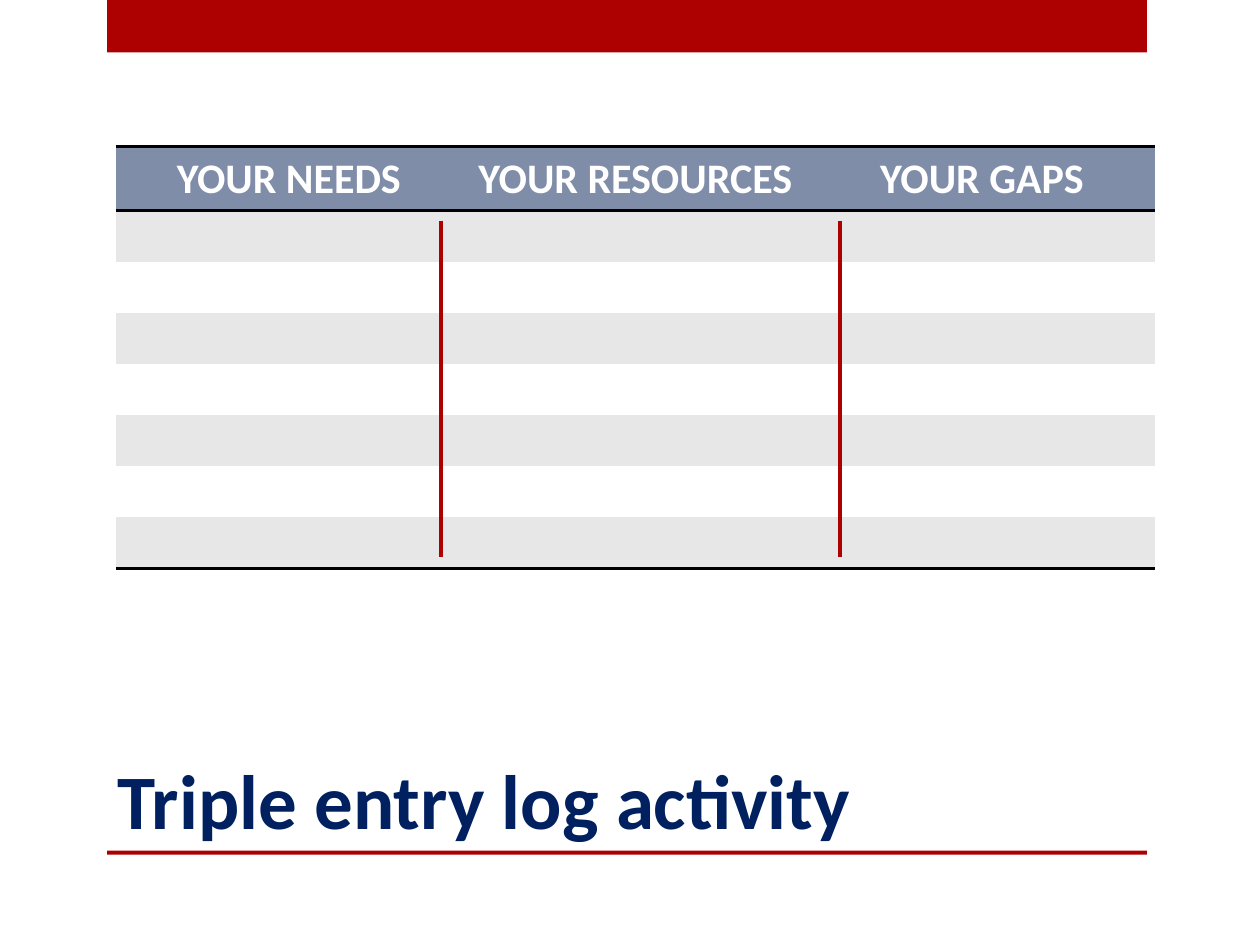
from lxml.etree import SubElement
from pptx import Presentation
from pptx.dml.color import RGBColor
from pptx.enum.shapes import MSO_CONNECTOR, MSO_SHAPE
from pptx.enum.text import MSO_ANCHOR, PP_ALIGN
from pptx.oxml.ns import qn
from pptx.util import Cm, Pt

COLORS = {
    "red": "AD0101", "navy": "002060", "head": "808DA9",
    "band": "E7E7E7", "white": "FFFFFF", "rule": "000000",
}
FONT = "Calibri"
PLAIN = "{2D5ABB26-0587-4C30-8999-92F81FD0307C}"  # no style, no grid
HEADS = ["YOUR NEEDS", "YOUR RESOURCES", "YOUR GAPS"]
ROWS = 8


def color(name):
    return RGBColor.from_string(COLORS[name])


def add_run(para, text, size, tone):
    run = para.add_run()
    run.text = text
    font = run.font
    font.name, font.size, font.bold = FONT, Pt(size), True
    font.color.rgb = color(tone)


def add_bar(slide, top, height):
    bar = slide.shapes.add_shape(
        MSO_SHAPE.RECTANGLE, Cm(2.16), Cm(top), Cm(20.96), Cm(height))
    bar.shadow.inherit = False
    bar.fill.solid()
    bar.fill.fore_color.rgb = color("red")
    bar.line.fill.background()


def set_title(slide, text):
    title = slide.shapes.title
    title.left, title.top = Cm(2.12), Cm(12.7)
    title.width, title.height = Cm(18.84), Cm(4.45)
    frame = title.text_frame
    frame.vertical_anchor = MSO_ANCHOR.BOTTOM
    para = frame.paragraphs[0]
    para.alignment = PP_ALIGN.LEFT
    add_run(para, text, 44, "navy")


def add_edge(cell, side):
    edge = SubElement(cell._tc.get_or_add_tcPr(), qn("a:ln" + side), w=str(Pt(2)))
    fill = SubElement(edge, qn("a:solidFill"))
    SubElement(fill, qn("a:srgbClr"), val=COLORS["rule"])


def style_cell(cell, row):
    # Edges come before the fill in the cell properties
    sides = "TB" if row == 0 else "B" if row == ROWS - 1 else ""
    for side in sides:
        add_edge(cell, side)
    tone = "head" if row == 0 else "band" if row % 2 else "white"
    cell.fill.solid()
    cell.fill.fore_color.rgb = color(tone)


def add_log(slide):
    frame = slide.shapes.add_table(
        ROWS, len(HEADS), Cm(2.33), Cm(2.96), Cm(20.96), Cm(8.5))
    table = frame.table
    table._tbl.tblPr.find(qn("a:tableStyleId")).text = PLAIN
    for i, row in enumerate(table.rows):
        row.height = Cm(1.03 if i else 1.29)
        for cell in row.cells:
            style_cell(cell, i)
    for cell, text in zip(table.rows[0].cells, HEADS):
        para = cell.text_frame.paragraphs[0]
        para.alignment = PP_ALIGN.CENTER
        add_run(para, text, 24, "white")


def add_divider(slide, x):
    line = slide.shapes.add_connector(
        MSO_CONNECTOR.STRAIGHT, Cm(x), Cm(4.45), Cm(x), Cm(11.22))
    line.line.color.rgb = color("red")
    line.line.width = Pt(2.5)
    SubElement(line._element.spPr, qn("a:effectLst"))


def main():
    deck = Presentation()
    deck.slide_width, deck.slide_height = Cm(25.4), Cm(19.05)
    slide = deck.slides.add_slide(deck.slide_layouts[5])
    # Top band and the rule under the title
    add_bar(slide, 0, 1.06)
    add_bar(slide, 17.15, 0.08)
    set_title(slide, "Triple entry log activity")
    # Log table with its column dividers
    add_log(slide)
    for x in (8.89, 16.93):
        add_divider(slide, x)
    deck.save("out.pptx")


if __name__ == "__main__":
    main()
